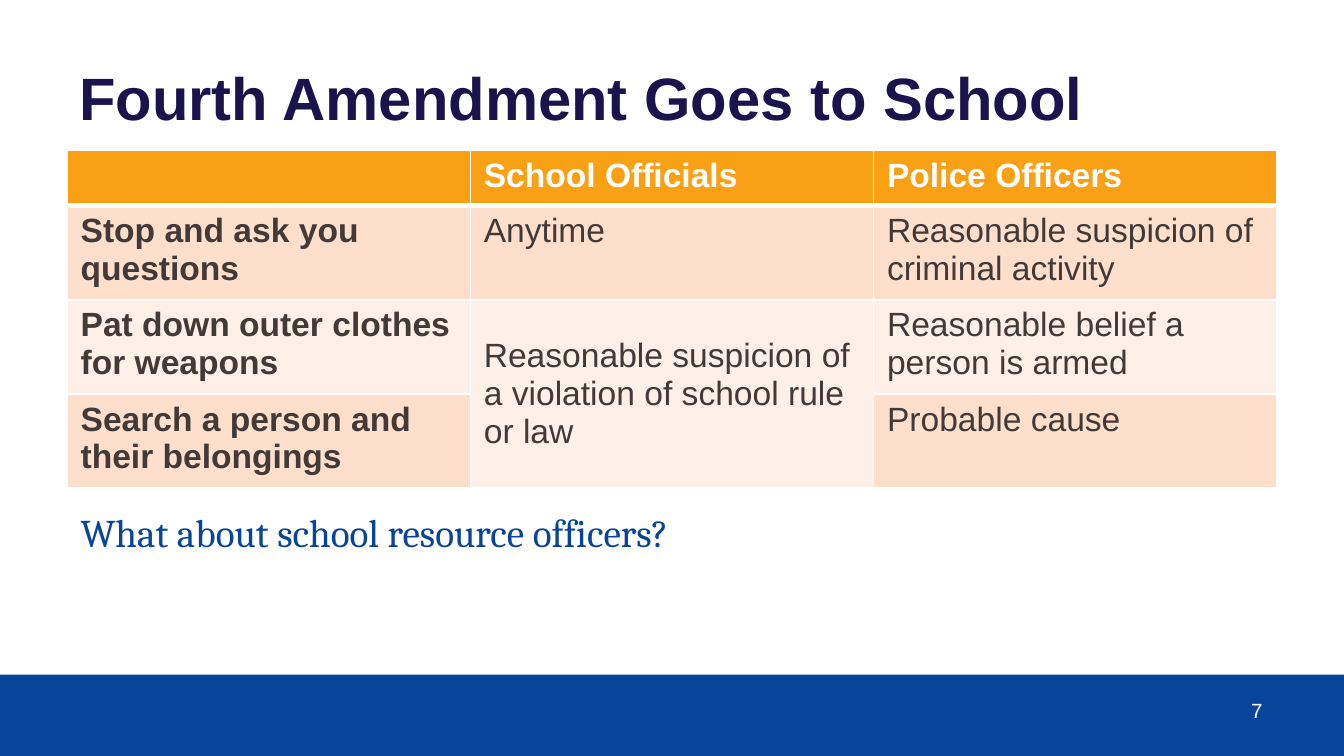
from dataclasses import dataclass

import lxml.etree
import pptx
import pptx.dml.color
import pptx.enum.shapes
import pptx.enum.text
import pptx.oxml.ns
import pptx.util

Inches = pptx.util.Inches
Anchor = pptx.enum.text.MSO_ANCHOR


@dataclass(frozen=True)
class Theme:
    blue: str = "08459A"
    navy: str = "1A134C"
    orange: str = "F9A014"
    peach: str = "FDDFCC"
    cream: str = "FEF0E7"
    brown: str = "433A38"
    white: str = "FFFFFF"
    sans: str = "Arial"
    serif: str = "Cambria"
    title_size: float = 32
    question_size: float = 21
    table_size: float = 18
    number_size: float = 11


@dataclass(frozen=True)
class TableRow:
    texts: tuple[str, str, str]
    fill: str
    height: float = 0.7
    header: bool = False


THEME = Theme()
ROWS = [
    TableRow(("", "School Officials", "Police Officers"), THEME.orange, 0.41, True),
    TableRow(("Stop and ask you questions", "Anytime",
              "Reasonable suspicion of criminal activity"), THEME.peach),
    TableRow(("Pat down outer clothes for weapons",
              "Reasonable suspicion of a violation of school rule or law",
              "Reasonable belief a person is armed"), THEME.cream),
    TableRow(("Search a person and their belongings", "", "Probable cause"), THEME.peach),
]


def place(shape, left: float, top: float, width: float, height: float) -> None:
    shape.left, shape.top = Inches(left), Inches(top)
    shape.width, shape.height = Inches(width), Inches(height)


def write(frame, text: str, size: float, color: str, font: str, bold: bool = False,
          anchor=Anchor.TOP):
    """Fill a text frame with one left-aligned run."""
    frame.word_wrap = True
    frame.vertical_anchor = anchor
    paragraph = frame.paragraphs[0]
    paragraph.alignment = pptx.enum.text.PP_ALIGN.LEFT
    run = paragraph.add_run()
    run.text = text
    run.font.size = pptx.util.Pt(size)
    run.font.name = font
    run.font.bold = bold
    run.font.color.rgb = pptx.dml.color.RGBColor.from_string(color)
    return paragraph


def set_margins(frame) -> None:
    frame.margin_left = frame.margin_right = Inches(0.09)
    frame.margin_top = frame.margin_bottom = Inches(0.04)


def set_borders(cell, top: float, bottom: float) -> None:
    properties = cell._tc.get_or_add_tcPr()
    qn = pptx.oxml.ns.qn
    for side, width in (("L", 1), ("R", 1), ("T", top), ("B", bottom)):
        line = lxml.etree.SubElement(properties, qn(f"a:ln{side}"), w=str(pptx.util.Pt(width)))
        fill = lxml.etree.SubElement(line, qn("a:solidFill"))
        lxml.etree.SubElement(fill, qn("a:srgbClr"), val=THEME.white)


def add_comparison(slide, rows: list[TableRow]) -> None:
    table = slide.shapes.add_table(len(rows), 3, Inches(0.5), Inches(1.12), Inches(9),
                                   Inches(sum(row.height for row in rows))).table
    for row_index, row in enumerate(rows):
        table.rows[row_index].height = Inches(row.height)
        for column_index, text in enumerate(row.texts):
            cell = table.cell(row_index, column_index)
            set_borders(cell, 3 if row_index == 1 else 1, 3 if row.header else 1)
            cell.fill.solid()
            cell.fill.fore_color.rgb = pptx.dml.color.RGBColor.from_string(row.fill)
            if text:
                color = THEME.white if row.header else THEME.brown
                write(cell.text_frame, text, THEME.table_size, color, THEME.sans,
                      row.header or column_index == 0)
    # One rule for school officials covers the last two rows
    shared_rule = table.cell(2, 1)
    shared_rule.merge(table.cell(3, 1))
    shared_rule.vertical_anchor = Anchor.MIDDLE


def main() -> None:
    presentation = pptx.Presentation()
    presentation.slide_width = Inches(10)
    presentation.slide_height = presentation.slide_width * 9 // 16
    slide = presentation.slides.add_slide(presentation.slide_layouts[1])

    # Footer band and slide number
    band_top = Inches(5.02)
    band = slide.shapes.add_shape(pptx.enum.shapes.MSO_SHAPE.RECTANGLE, 0, band_top,
                                  presentation.slide_width,
                                  presentation.slide_height - band_top)
    band.shadow.inherit = False
    band.fill.solid()
    band.fill.fore_color.rgb = pptx.dml.color.RGBColor.from_string(THEME.blue)
    band.line.fill.background()
    number = slide.shapes.add_textbox(Inches(9.22), Inches(5.15), Inches(0.44), Inches(0.28))
    set_margins(number.text_frame)
    write(number.text_frame, "7", THEME.number_size, THEME.white, THEME.sans)

    # Title
    title = slide.shapes.title
    place(title, 0.5, 0.25, 8, 0.94)
    set_margins(title.text_frame)
    title.text_frame.auto_size = pptx.enum.text.MSO_AUTO_SIZE.NONE
    write(title.text_frame, "Fourth Amendment Goes to School", THEME.title_size,
          THEME.navy, THEME.sans, True, Anchor.MIDDLE)

    # Comparison table
    add_comparison(slide, ROWS)

    # Closing question
    question = slide.placeholders[1]
    place(question, 0.5, 3.73, 9, 0.45)
    question.text_frame.auto_size = pptx.enum.text.MSO_AUTO_SIZE.NONE
    paragraph = write(question.text_frame, "What about school resource officers?",
                      THEME.question_size, THEME.blue, THEME.serif)
    paragraph.space_before = pptx.util.Pt(0)
    properties = paragraph._p.get_or_add_pPr()
    properties.set("marL", "0")
    properties.set("indent", "0")
    lxml.etree.SubElement(properties, pptx.oxml.ns.qn("a:buNone"))

    presentation.save("out.pptx")


if __name__ == "__main__":
    main()
